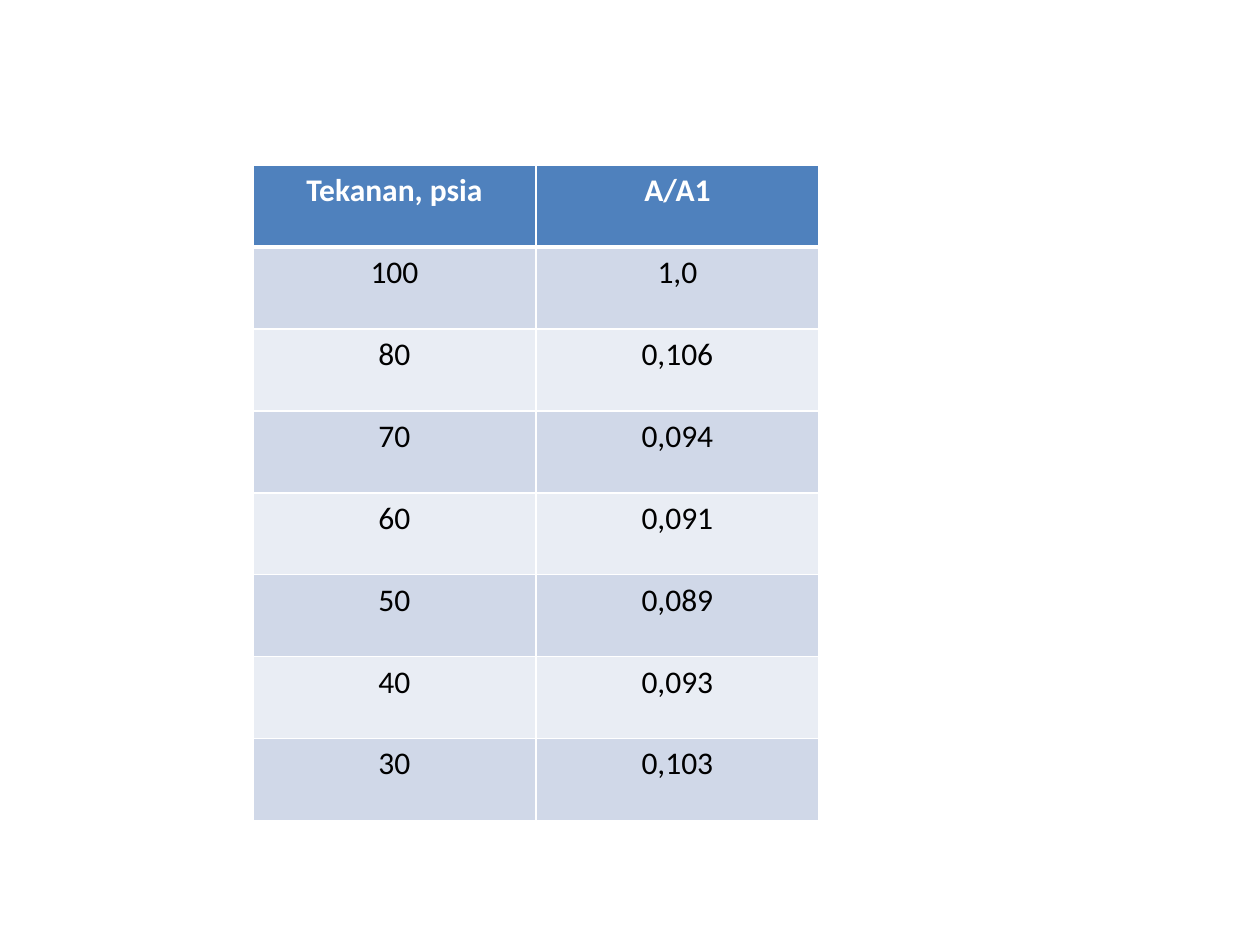
import pptx
import pptx.util
import pptx.dml.color
import pptx.enum.text
import pptx.oxml

ROWS = [
    ("Tekanan, psia", "A/A1"),
    ("100", "1,0"),
    ("80", "0,106"),
    ("70", "0,094"),
    ("60", "0,091"),
    ("50", "0,089"),
    ("40", "0,093"),
    ("30", "0,103"),
]
COLORS = {
    "header": "4F81BD",
    "odd": "D0D8E8",
    "even": "E9EDF4",
    "white": "FFFFFF",
    "black": "000000",
}
PX = 914400 // 126
SLIDE_WIDTH, SLIDE_HEIGHT = 1260, 945
LEFT, TOP = 253, 165
COLUMN_WIDTH, ROW_HEIGHT = 283, 82
BORDER, HEADER_BORDER = 1, 3
NAMESPACE = "http://schemas.openxmlformats.org/drawingml/2006/main"


def rgb(name):
    return pptx.dml.color.RGBColor.from_string(COLORS[name])


def add_borders(cell, widths):
    properties = cell._tc.get_or_add_tcPr()
    for position, (side, width) in enumerate(widths.items()):
        line = pptx.oxml.parse_xml(
            f'<a:ln{side} xmlns:a="{NAMESPACE}" w="{pptx.util.Pt(width)}">'
            f'<a:solidFill><a:srgbClr val="{COLORS["white"]}"/></a:solidFill>'
            f'</a:ln{side}>'
        )
        properties.insert(position, line)


def fill_cell(cell, text, row_index):
    is_header = row_index == 0
    fill_name = "header" if is_header else ("odd" if row_index % 2 else "even")
    cell.fill.solid()
    cell.fill.fore_color.rgb = rgb(fill_name)
    cell.text = text
    paragraph = cell.text_frame.paragraphs[0]
    paragraph.alignment = pptx.enum.text.PP_ALIGN.CENTER
    font = paragraph.runs[0].font
    font_format = {"name": "Calibri", "size": pptx.util.Pt(18), "bold": is_header}
    for attribute, value in font_format.items():
        setattr(font, attribute, value)
    font.color.rgb = rgb("white" if is_header else "black")
    add_borders(cell, {
        "L": BORDER,
        "R": BORDER,
        "T": HEADER_BORDER if row_index == 1 else BORDER,
        "B": HEADER_BORDER if is_header else BORDER,
    })


def main():
    presentation = pptx.Presentation()
    presentation.slide_width = SLIDE_WIDTH * PX
    presentation.slide_height = SLIDE_HEIGHT * PX
    slide = presentation.slides.add_slide(presentation.slide_layouts[6])
    column_count = len(ROWS[0])
    table = slide.shapes.add_table(
        len(ROWS), column_count, LEFT * PX, TOP * PX,
        column_count * COLUMN_WIDTH * PX, len(ROWS) * ROW_HEIGHT * PX,
    ).table
    for row_index, row in enumerate(ROWS):
        for column_index, text in enumerate(row):
            fill_cell(table.cell(row_index, column_index), text, row_index)
    presentation.save("out.pptx")


if __name__ == "__main__":
    main()
